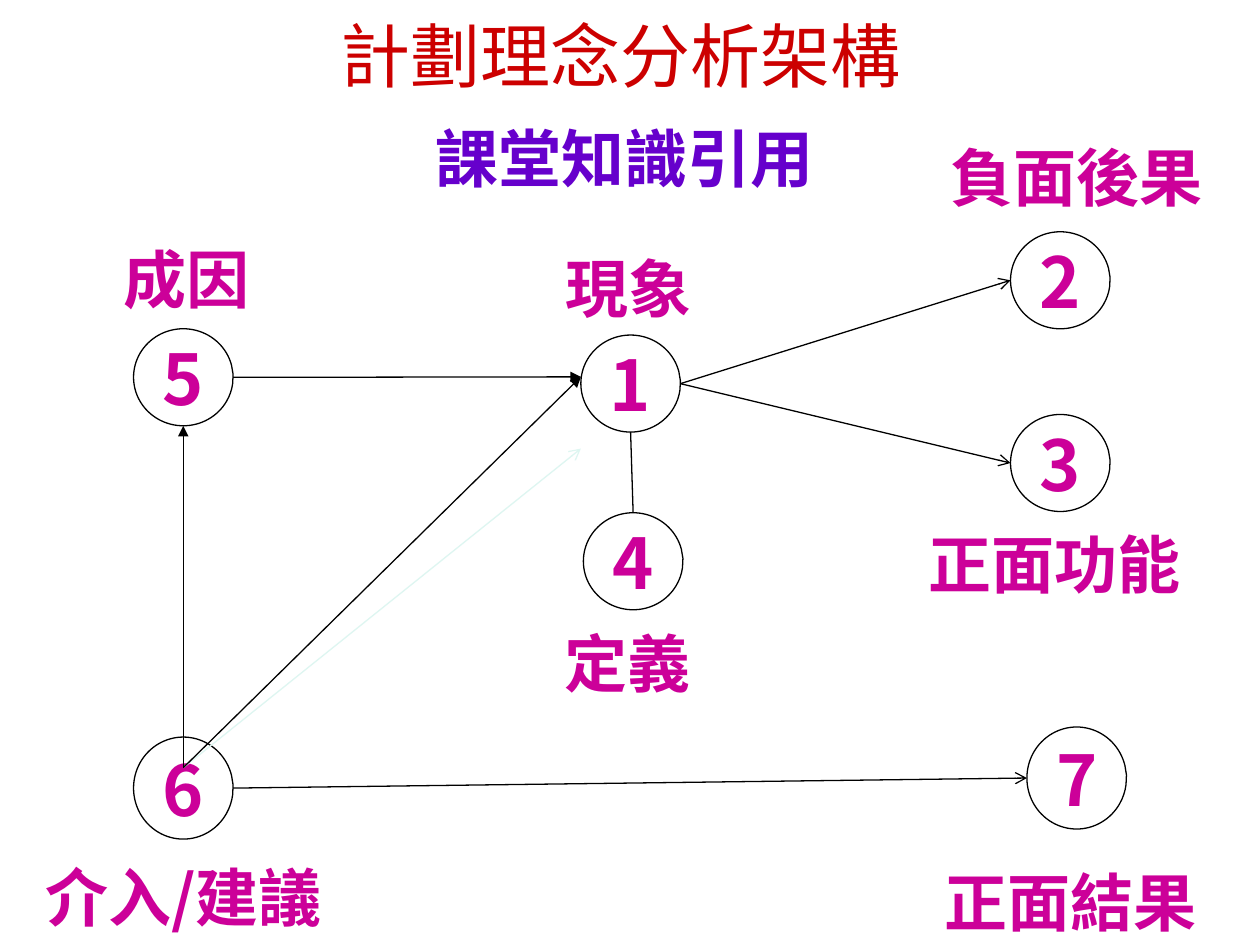
from pptx import Presentation
from pptx.dml.color import RGBColor
from pptx.enum.shapes import MSO_CONNECTOR, MSO_SHAPE
from pptx.enum.text import MSO_ANCHOR, PP_ALIGN
from pptx.oxml.ns import qn
from pptx.util import Inches, Pt
from lxml.etree import SubElement

# Content
CJK = "Noto Sans CJK SC"
TITLE = "計劃理念分析架構"
TITLE_BOX = (-0.04, 0.05, 9.93, 0.76)
TITLE_STYLE = {"size": Pt(40), "name": "Arial", "bold": False}
LABEL_STYLE = {"size": Pt(36), "name": CJK, "bold": True}
NUMBER_STYLE = {"size": Pt(40), "name": CJK, "bold": True}
RED, MAGENTA, PURPLE = "CC0000", "CC0099", "6600CC"
BLACK, PALE = "000000", "DEF6F1"
LABEL_HEIGHT, NODE_WIDTH = 0.71, 0.79

# Labels: text, left, top, width, colour, wrap
LABELS = [
    ("現象 ", 3.63, 1.95, 2.83, MAGENTA, True),
    ("負面後果", 7.03, 1.07, 3.02, MAGENTA, True),
    ("成因", 0.22, 1.88, 2.52, MAGENTA, True),
    ("介入/建議", 0.04, 6.78, 2.83, MAGENTA, True),
    ("正面結果", 7.2, 6.82, 2.6, MAGENTA, True),
    ("正面功能", 6.74, 4.14, 3.25, MAGENTA, True),
    ("定義 ", 4.23, 4.93, 1.62, MAGENTA, True),
    ("課堂知識引用", 3.34, 0.92, 3.23, PURPLE, False),
]

# Numbered nodes: left, top, height
NODES = {
    7: (8.15, 5.77, 0.81),
    1: (4.61, 2.66, 0.77),
    6: (1.06, 5.85, 0.81),
    2: (8.02, 1.84, 0.77),
    5: (1.06, 2.61, 0.77),
    3: (8.02, 3.29, 0.77),
    4: (4.63, 4.07, 0.77),
}

# Link ends are shares of a node's width and height
LEFT, RIGHT, TOP, BOTTOM = (0, 0.5), (1, 0.5), (0.5, 0), (0.5, 1)
INSIDE, UPPER_LEFT, BELOW_LEFT = (0.5, 0.3), (0, 0.43), (0, 1.17)
LINKS = [
    (1, RIGHT, 2, LEFT, BLACK, "arrow"),
    (6, INSIDE, 1, BELOW_LEFT, PALE, "arrow"),
    (6, RIGHT, 7, LEFT, BLACK, "arrow"),
    (1, RIGHT, 3, LEFT, BLACK, "arrow"),
    (5, RIGHT, 1, UPPER_LEFT, BLACK, "triangle"),
    (1, BOTTOM, 4, TOP, BLACK, None),
    (6, INSIDE, 5, BOTTOM, BLACK, "triangle"),
    (6, INSIDE, 1, UPPER_LEFT, BLACK, "triangle"),
]


def rgb(value):
    return RGBColor.from_string(value)


def inches(*values):
    return [Inches(value) for value in values]


def write(shape, text, style, color):
    frame = shape.text_frame
    frame.vertical_anchor = MSO_ANCHOR.MIDDLE
    paragraph = frame.paragraphs[0]
    paragraph.alignment = PP_ALIGN.CENTER
    run = paragraph.add_run()
    run.text = text
    for name, value in style.items():
        setattr(run.font, name, value)
    run.font.color.rgb = rgb(color)
    SubElement(run.font._element, qn("a:ea"), typeface=CJK)
    return frame


def point(node, share):
    left, top, height = NODES[node]
    return inches(left + share[0] * NODE_WIDTH, top + share[1] * height)


def outline(shape, color):
    shape.line.color.rgb = rgb(color)
    shape.line.width = Pt(0.75)


deck = Presentation()
deck.slide_width, deck.slide_height = inches(10, 7.5)
slide = deck.slides.add_slide(deck.slide_layouts[5])

# Title
title = slide.shapes.title
title.left, title.top, title.width, title.height = inches(*TITLE_BOX)
write(title, TITLE, TITLE_STYLE, RED)

# Labels
for text, left, top, width, color, wrap in LABELS:
    box = slide.shapes.add_textbox(*inches(left, top, width, LABEL_HEIGHT))
    frame = write(box, text, LABEL_STYLE, color)
    frame.word_wrap = wrap
    frame.margin_top = 0

# Numbered nodes
for number, (left, top, height) in NODES.items():
    node = slide.shapes.add_shape(
        MSO_SHAPE.OVAL_CALLOUT, *inches(left, top, NODE_WIDTH, height))
    node.adjustments[0], node.adjustments[1] = 0.5, -0.03
    node.shadow.inherit = False
    node.fill.background()
    outline(node, BLACK)
    frame = write(node, str(number), NUMBER_STYLE, MAGENTA)
    frame.margin_top = frame.margin_bottom = 0

# Links
for start, start_share, end, end_share, color, head in LINKS:
    link = slide.shapes.add_connector(
        MSO_CONNECTOR.STRAIGHT, *point(start, start_share), *point(end, end_share))
    outline(link, color)
    if head:
        SubElement(link.line._get_or_add_ln(), qn("a:tailEnd"), type=head)
    SubElement(link._element.spPr, qn("a:effectLst"))

deck.save("out.pptx")
